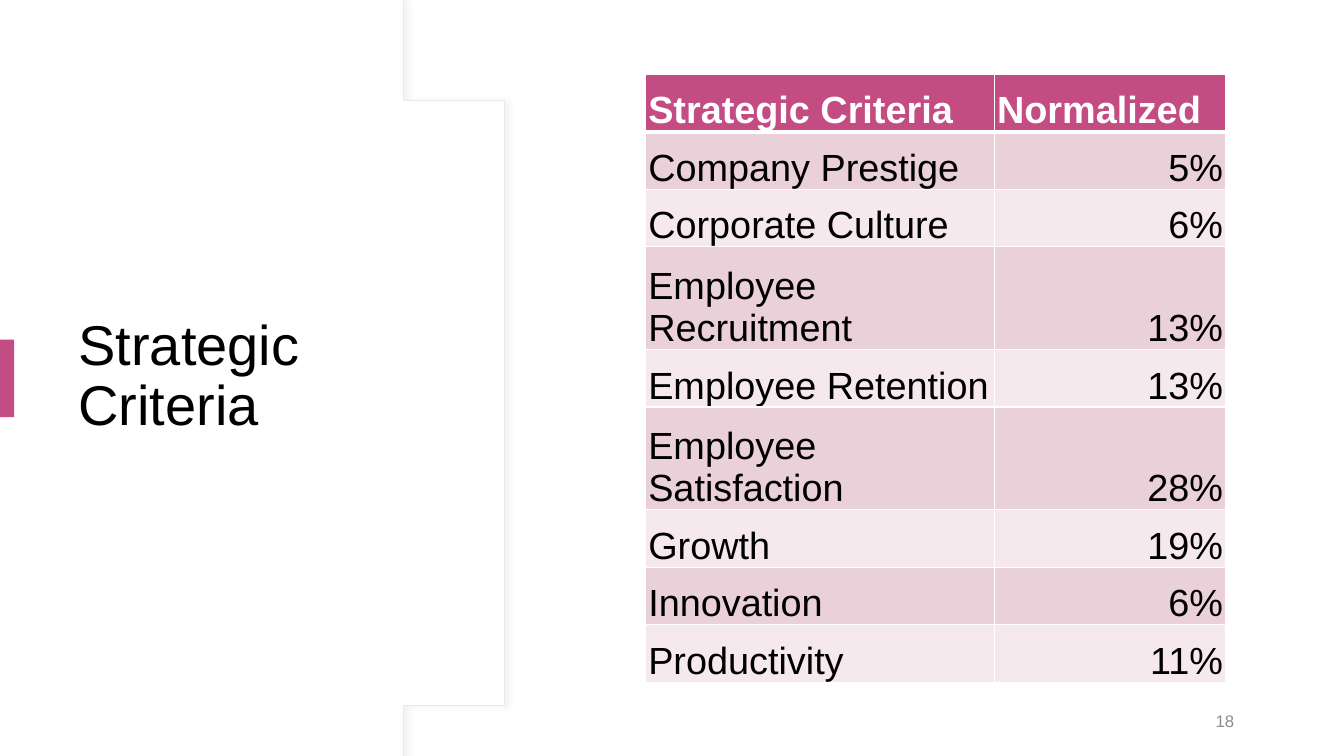
"""Build the strategic criteria slide with its table of normalized weights."""
from lxml import etree
from pptx import Presentation
from pptx import util as u
from pptx.dml.color import RGBColor
from pptx.enum import shapes, text
from pptx.oxml import parse_xml
from pptx.oxml.ns import nsdecls, qn

TITLE = "Strategic Criteria"
NUMBER = "18"
ROWS = [
    ("Strategic Criteria", "Normalized"),
    ("Company Prestige", "5%"),
    ("Corporate Culture", "6%"),
    ("Employee Recruitment", "13%"),
    ("Employee Retention", "13%"),
    ("Employee Satisfaction", "28%"),
    ("Growth", "19%"),
    ("Innovation", "6%"),
    ("Productivity", "11%"),
]
WIDTHS = (3.46, 2.3)
SHORT, TALL = 0.57, 1.02
WRAPPED = (3, 5)
PINK, BANDS = "C34D83", ("F5E9ED", "E9D0D9")
WHITE, BLACK, GREY, EDGE = "FFFFFF", "000000", "8C8C8C", "F0E5EA"
ARC = [
    ((4.01, 0.08), (4.79, 1.02), (5.27, 2.32), (5.27, 3.75)),
    ((5.27, 3.75), (5.27, 5.18), (4.79, 6.48), (4.01, 7.42)),
]
STEPS = 24


def paint(part, color):
    part.solid()
    part.fore_color.rgb = RGBColor.from_string(color)


def style(para, size, color, align=text.PP_ALIGN.LEFT, bold=False):
    para.alignment = align
    font = para.font
    font.name, font.size, font.bold = "Arial", u.Pt(size), bold
    paint(font.fill, color)


def label(slide, words, box, size, color, align=text.PP_ALIGN.LEFT):
    frame = slide.shapes.add_textbox(*map(u.Inches, box)).text_frame
    frame.word_wrap = True
    frame.vertical_anchor = text.MSO_ANCHOR.MIDDLE
    frame.text = words
    style(frame.paragraphs[0], size, color, align)
    return frame.paragraphs[0]


def curve(knots):
    for step in range(STEPS + 1):
        t = step / STEPS
        parts = ((1 - t) ** 3, 3 * t * (1 - t) ** 2, 3 * t * t * (1 - t), t ** 3)
        yield tuple(sum(w * k[axis] for w, k in zip(parts, knots)) for axis in (0, 1))


def panel(slide):
    points = [(3.94, 0)] + [p for knots in ARC for p in curve(knots)]
    points += [(3.94, 7.5), (0, 7.5)]
    build = slide.shapes.build_freeform(0, 0, scale=u.Inches(1))
    build.add_line_segments(points, close=True)
    shape = build.convert_to_shape()
    paint(shape.fill, WHITE)
    paint(shape.line.fill, EDGE)
    shape.line.width = u.Pt(0.75)
    shape.shadow.inherit = False
    glow = shape.element.spPr.find(qn("a:effectLst"))
    glow.append(parse_xml(
        f'<a:outerShdw {nsdecls("a")} blurRad="{u.Pt(4)}" dist="{u.Pt(3)}" dir="0">'
        '<a:srgbClr val="D9D9D9"><a:alpha val="30000"/></a:srgbClr></a:outerShdw>'))


def border(cell, side, width):
    line = etree.SubElement(cell._tc.get_or_add_tcPr(), qn(f"a:ln{side}"), w=str(u.Pt(width)))
    fill = etree.SubElement(line, qn("a:solidFill"))
    etree.SubElement(fill, qn("a:srgbClr"), val=WHITE)


def grid(slide):
    highs = [TALL if row in WRAPPED else SHORT for row in range(len(ROWS))]
    box = (6.4, 0.74, sum(WIDTHS), sum(highs))
    table = slide.shapes.add_table(len(ROWS), len(WIDTHS), *map(u.Inches, box)).table
    for col, width in zip(table.columns, WIDTHS):
        col.width = u.Inches(width)
    for row, (high, words) in enumerate(zip(highs, ROWS)):
        table.rows[row].height = u.Inches(high)
        head = row == 0
        for col, word in enumerate(words):
            cell = table.cell(row, col)
            cell.text = word
            cell.vertical_anchor = text.MSO_ANCHOR.BOTTOM
            cell.margin_left = cell.margin_right = cell.margin_top = u.Inches(0.03)
            cell.margin_bottom = 0
            for side, width in zip("LRTB", (1, 1, 3 if row == 1 else 1, 3 if head else 1)):
                border(cell, side, width)
            paint(cell.fill, PINK if head else BANDS[row % 2])
            right = col == 1 and not head
            style(cell.text_frame.paragraphs[0], 27, WHITE if head else BLACK,
                  text.PP_ALIGN.RIGHT if right else text.PP_ALIGN.LEFT, head)


def main():
    deck = Presentation()
    deck.slide_width, deck.slide_height = u.Inches(13.33), u.Inches(7.5)
    slide = deck.slides.add_slide(deck.slide_layouts[6])
    paint(slide.background.fill, WHITE)
    panel(slide)
    title = label(slide, TITLE, (0.68, 1.27, 3.94, 4.95), 40, BLACK)
    title.line_spacing = 0.9
    mark = slide.shapes.add_shape(
        shapes.MSO_SHAPE.RECTANGLE, *map(u.Inches, (0, 3.37, 0.14, 0.77)))
    paint(mark.fill, PINK)
    mark.line.fill.background()
    mark.shadow.inherit = False
    grid(slide)
    label(slide, NUMBER, (9.34, 6.95, 3, 0.4), 12, GREY, text.PP_ALIGN.RIGHT)
    deck.save("out.pptx")


if __name__ == "__main__":
    main()
